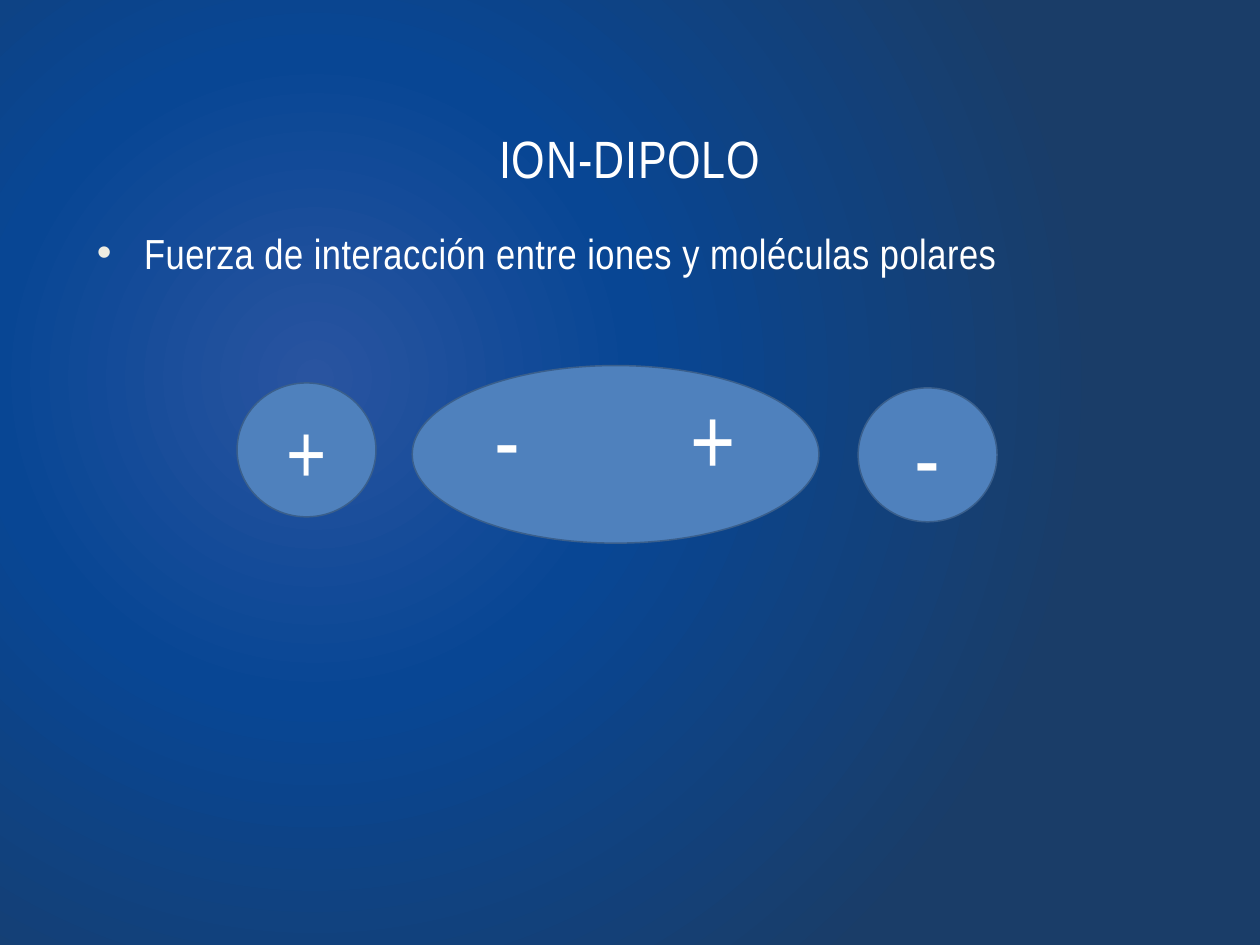
from dataclasses import dataclass

from lxml import etree
from pptx import Presentation
from pptx.dml.color import RGBColor
from pptx.enum.shapes import MSO_SHAPE
from pptx.enum.text import MSO_ANCHOR, MSO_AUTO_SIZE, PP_ALIGN
from pptx.oxml import parse_xml
from pptx.oxml.ns import nsdecls, qn
from pptx.util import Cm, Pt

OVAL = MSO_SHAPE.OVAL
CENTER, LEFT = PP_ALIGN.CENTER, PP_ALIGN.LEFT
TOP, MIDDLE, BOTTOM = MSO_ANCHOR.TOP, MSO_ANCHOR.MIDDLE, MSO_ANCHOR.BOTTOM
NO_AUTOFIT = MSO_AUTO_SIZE.NONE


@dataclass(frozen=True)
class Theme:
    font: str = "Arial Narrow"
    text: str = "FFFFFF"
    bullet: str = "EEECE1"
    fill: str = "4F81BD"
    outline: str = "3A5F8C"
    background: tuple = ((0, "2954A0"), (41, "084694"), (100, "1A3D68"))
    title_size: int = 30
    body_size: int = 24
    cation_size: int = 48
    charge_size: int = 54


theme = Theme()


def format_paragraph(paragraph, size, alignment, spacing=0):
    paragraph.alignment = alignment
    paragraph.space_before = Pt(0)
    font = paragraph.font
    font.name, font.size = theme.font, Pt(size)
    font.color.rgb = RGBColor.from_string(theme.text)
    if spacing:
        properties = paragraph._p.get_or_add_pPr().find(qn("a:defRPr"))
        properties.set("spc", str(spacing))


def place(shape, left, top, width, height):
    shape.left, shape.top = Cm(left), Cm(top)
    shape.width, shape.height = Cm(width), Cm(height)


presentation = Presentation()
presentation.slide_width, presentation.slide_height = Cm(25.4), Cm(19.05)
slide = presentation.slides.add_slide(presentation.slide_layouts[1])

# Background: circular gradient centred left of the middle
slide.background.fill.gradient()
linear = next(slide.element.iter(qn("a:gradFill")))
stops = "".join(
    f'<a:gs pos="{position * 1000}"><a:srgbClr val="{color}"/></a:gs>'
    for position, color in theme.background
)
linear.getparent().replace(linear, parse_xml(
    f'<a:gradFill {nsdecls("a")} rotWithShape="1"><a:gsLst>{stops}</a:gsLst>'
    '<a:path path="circle"><a:fillToRect l="50000" t="80000" r="100000" b="100000"/>'
    "</a:path></a:gradFill>"
))

# Title
title = slide.shapes.title
place(title, 1.7, 0.76, 22, 3.18)
title.text_frame.text = "ION-DIPOLO"
title.text_frame.auto_size = NO_AUTOFIT
title.text_frame.vertical_anchor = BOTTOM
format_paragraph(title.text_frame.paragraphs[0], theme.title_size, CENTER, 50)

# Definition
body = slide.placeholders[1]
place(body, 1.7, 4.45, 22, 11.43)
body.text_frame.text = "Fuerza de interacción entre iones y moléculas polares"
body.text_frame.auto_size = NO_AUTOFIT
body.text_frame.vertical_anchor = TOP
definition = body.text_frame.paragraphs[0]
definition.space_after = Pt(6)
properties = definition._p.get_or_add_pPr()
properties.set("marL", str(Cm(0.95)))
properties.set("indent", str(Cm(-0.95)))
bullet_color = etree.SubElement(properties, qn("a:buClr"))
etree.SubElement(bullet_color, qn("a:srgbClr"), val=theme.bullet)
etree.SubElement(properties, qn("a:buFont"), typeface="Arial")
etree.SubElement(properties, qn("a:buChar"), char="•")
format_paragraph(definition, theme.body_size, LEFT, 30)

# Cation, dipole and anion
particles = [
    (4.78, 7.72, 2.8, 2.7, "+", theme.cation_size),
    (8.31, 7.37, 8.2, 3.58, "-\t+", theme.charge_size),
    (17.3, 7.82, 2.8, 2.7, "-", theme.charge_size),
]
for left, top, width, height, charge, size in particles:
    particle = slide.shapes.add_shape(OVAL, Cm(left), Cm(top), Cm(width), Cm(height))
    particle.shadow.inherit = False
    particle.fill.solid()
    particle.fill.fore_color.rgb = RGBColor.from_string(theme.fill)
    particle.line.color.rgb = RGBColor.from_string(theme.outline)
    particle.line.width = Pt(0.85)
    frame = particle.text_frame
    frame.text = charge
    frame.vertical_anchor = MIDDLE
    paragraph = frame.paragraphs[0]
    is_dipole = "\t" in charge
    if is_dipole:
        # The tab stop parts the two poles, which sit above the middle
        frame.margin_left, frame.margin_right = Cm(0.45), Cm(0)
        frame.margin_top, frame.margin_bottom = Cm(0), Cm(0.7)
        tabs = etree.SubElement(paragraph._p.get_or_add_pPr(), qn("a:tabLst"))
        etree.SubElement(tabs, qn("a:tab"), pos=str(Cm(3.96)), algn="l")
    format_paragraph(paragraph, size, LEFT if is_dipole else CENTER)

presentation.save("out.pptx")
